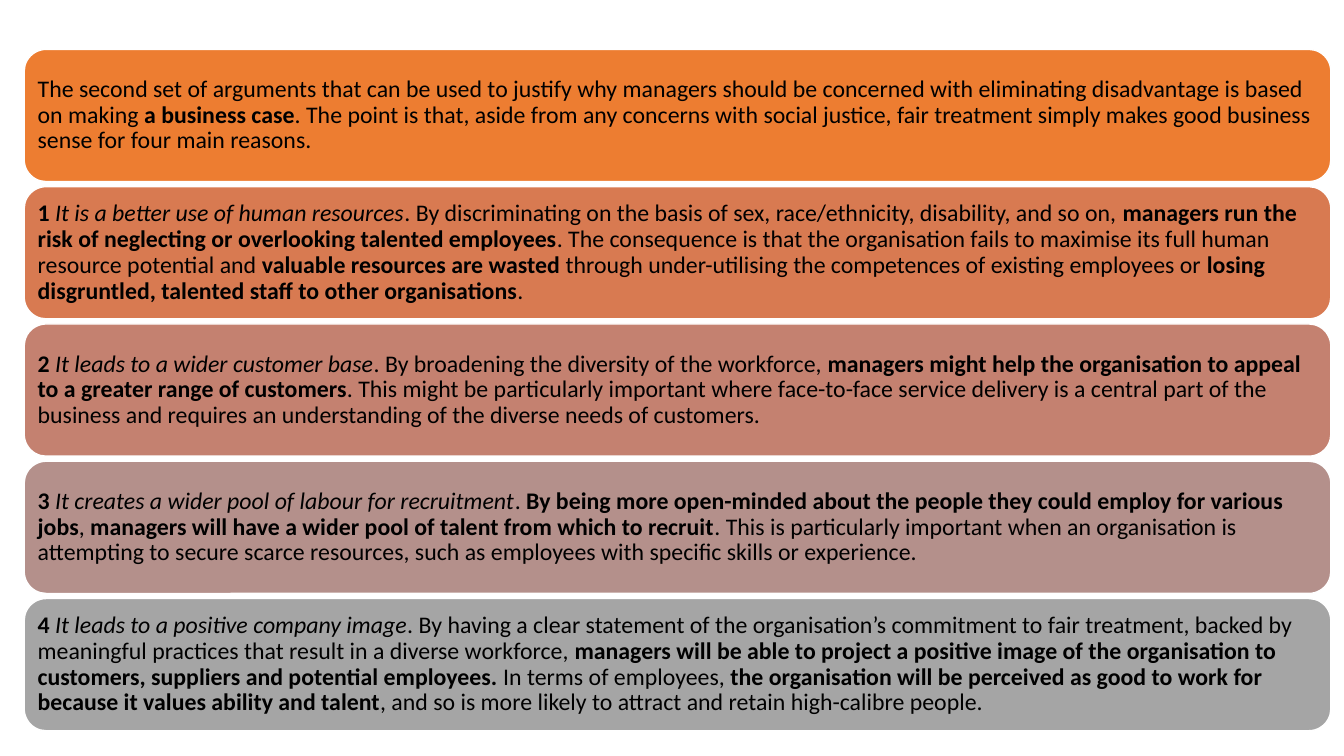
from pptx import Presentation
from pptx.dml.color import RGBColor
from pptx.enum.shapes import MSO_SHAPE
from pptx.enum.text import MSO_ANCHOR, PP_ALIGN
from pptx.util import Inches, Pt

ROUNDED = MSO_SHAPE.ROUNDED_RECTANGLE
MIDDLE = MSO_ANCHOR.MIDDLE
LEFT = PP_ALIGN.LEFT

BLACK = RGBColor(0x00, 0x00, 0x00)
WHITE = RGBColor(0xFF, 0xFF, 0xFF)
ORANGE = RGBColor(0xED, 0x7D, 0x31)
TERRACOTTA = RGBColor(0xD8, 0x7A, 0x51)
ROSE = RGBColor(0xC4, 0x81, 0x70)
MAUVE = RGBColor(0xB4, 0x90, 0x8B)
GREY = RGBColor(0xA5, 0xA5, 0xA5)

PLAIN, BOLD, ITALIC = {}, {"bold": True}, {"italic": True}
FONT = {"name": "Calibri", "size": Pt(17), "bold": False, "italic": False}
FRAME = {
    "word_wrap": True,
    "vertical_anchor": MIDDLE,
    "margin_left": Inches(0.07),
    "margin_right": Inches(0.07),
    "margin_top": Inches(0.07),
    "margin_bottom": Inches(0.07),
}
STACK_BOX = (0.24, 0.49, 12.96, 6.76)
GAP = 0.05

ARGUMENTS = [
    (ORANGE, [
        ("The second set of arguments that can be used to justify why managers should be "
         "concerned with eliminating disadvantage is based on making ", PLAIN),
        ("a business case", BOLD),
        (". The point is that, aside from any concerns with social justice, fair treatment "
         "simply makes good business sense for four main reasons.", PLAIN),
    ]),
    (TERRACOTTA, [
        ("1 ", BOLD),
        ("It is a better use of human resources", ITALIC),
        (". By discriminating on the basis of sex, race/ethnicity, disability, and so on, ", PLAIN),
        ("managers run the risk of neglecting or overlooking talented employees", BOLD),
        (". The consequence is that the organisation fails to maximise its full human "
         "resource potential and ", PLAIN),
        ("valuable resources are wasted ", BOLD),
        ("through under-utilising the competences of existing employees or ", PLAIN),
        ("losing disgruntled, talented staff to other organisations", BOLD),
        (".", PLAIN),
    ]),
    (ROSE, [
        ("2 ", BOLD),
        ("It leads to a wider customer base", ITALIC),
        (". By broadening the diversity of the workforce, ", PLAIN),
        ("managers might help the organisation to appeal to a greater range of customers", BOLD),
        (". This might be particularly important where face-to-face service delivery is a "
         "central part of the business and requires an understanding of the diverse needs "
         "of customers.", PLAIN),
    ]),
    (MAUVE, [
        ("3 ", BOLD),
        ("It creates a wider pool of labour for recruitment", ITALIC),
        (". ", PLAIN),
        ("By being more open-minded about the people they could employ for various jobs", BOLD),
        (", ", PLAIN),
        ("managers will have a wider pool of talent from which to recruit", BOLD),
        (". This is particularly important when an organisation is attempting to secure "
         "scarce resources, such as employees with specific skills or experience.", PLAIN),
    ]),
    (GREY, [
        ("4 ", BOLD),
        ("It leads to a positive company image", ITALIC),
        (". By having a clear statement of the organisation’s commitment to fair treatment, "
         "backed by meaningful practices that result in a diverse workforce, ", PLAIN),
        ("managers will be able to project a positive image of the organisation to "
         "customers, suppliers and potential employees. ", BOLD),
        ("In terms of employees, ", PLAIN),
        ("the organisation will be perceived as good to work for because it values ability "
         "and talent", BOLD),
        (", and so is more likely to attract and retain high-calibre people.", PLAIN),
    ]),
]


def set_attributes(target, values):
    """Set each named value on the target."""
    for name, value in values.items():
        setattr(target, name, value)


def add_argument(page, box, colour, spans):
    """Fill the box with one coloured panel holding mixed-format text."""
    panel = page.shapes.add_shape(ROUNDED, *map(Inches, box))
    panel.shadow.inherit = False
    panel.fill.solid()
    panel.fill.fore_color.rgb = colour
    panel.line.color.rgb = WHITE
    panel.line.width = Pt(1)
    set_attributes(panel.text_frame, FRAME)
    para = panel.text_frame.paragraphs[0]
    set_attributes(para, {"alignment": LEFT, "line_spacing": 0.9})
    for text, style in spans:
        span = para.add_run()
        span.text = text
        set_attributes(span.font, {**FONT, **style})
        span.font.color.rgb = BLACK


def add_argument_stack(page, box, arguments):
    """Stack the arguments in equal rows within the box."""
    left, top, width, height = box
    pitch = (height + GAP) / len(arguments)
    for row, (colour, spans) in enumerate(arguments):
        add_argument(page, (left, top + row * pitch, width, pitch - GAP), colour, spans)


def main():
    """Build and save the slide."""
    deck = Presentation()
    deck.slide_width, deck.slide_height = Inches(13.33), Inches(7.5)
    page = deck.slides.add_slide(deck.slide_layouts.get_by_name("Blank"))
    add_argument_stack(page, STACK_BOX, ARGUMENTS)
    deck.save("out.pptx")


if __name__ == "__main__":
    main()
